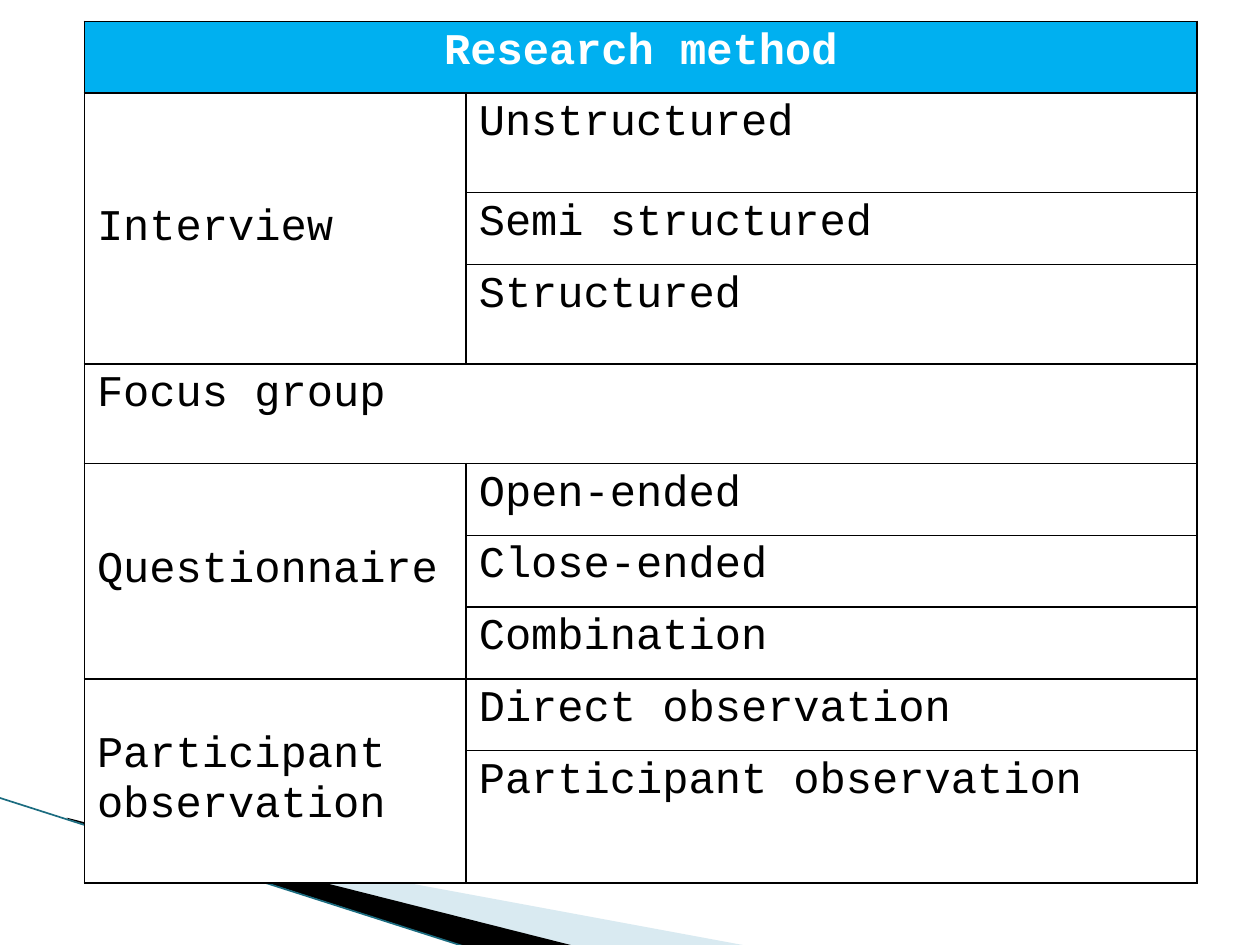
"""Build a slide with a table of research methods."""
from dataclasses import dataclass

from lxml.etree import SubElement
from pptx import Presentation
from pptx.dml.color import RGBColor
from pptx.enum.shapes import MSO_CONNECTOR as Connector
from pptx.enum.text import MSO_ANCHOR as Anchor, PP_ALIGN as Align
from pptx.oxml.ns import qn
from pptx.shapes.autoshape import Shape
from pptx.slide import Slide
from pptx.table import _Cell as Cell
from pptx.util import Inches, Pt


@dataclass(frozen=True)
class Theme:
    """Colours, font and sizes of the slide."""
    font: str = "Courier New"
    size: float = 25
    ink: str = "000000"
    paper: str = "FFFFFF"
    header: str = "00B0F0"
    pale: str = "A0CBDC"
    edge: str = "1B6C80"
    border: float = 1
    edge_width: float = 0.95


@dataclass(frozen=True)
class Wedge:
    """A filled outline in the corner, with its frame and points in inches."""
    frame: tuple[float, float, float, float]
    points: tuple[tuple[float, float], ...]
    color: str
    opacity: int = 100


@dataclass(frozen=True)
class Method:
    """A research method with its kinds and their row heights in inches."""
    name: str
    heights: tuple[float, ...]
    kinds: tuple[str, ...] = ()


THEME = Theme()
HEADER_HEIGHT = 0.57
COLUMNS = (3.03, 5.8)
WEDGES = (
    Wedge((0.78, 5.47, 4.16, 1.58),
          ((0.55, 6.51), (5.95, 7.51), (4.56, 7.51), (0.55, 6.5)), THEME.pale, 40),
    Wedge((-0.06, 6.33, 4.16, 0.92),
          ((0.53, 6.49), (4.57, 7.51), (3.72, 7.52), (0.54, 6.5)), THEME.ink),
)
METHODS = (
    Method("Interview", (0.79, 0.57, 0.79), ("Unstructured", "Semi structured", "Structured")),
    Method("Focus group", (0.79,)),
    Method("Questionnaire", (0.57, 0.57, 0.57), ("Open-ended", "Close-ended", "Combination")),
    Method("Participant observation", (0.57, 1.05), ("Direct observation", "Participant observation")),
)


def rgb(color: str) -> RGBColor:
    """Turn a hex string into a colour."""
    return RGBColor.from_string(color)


def reframe(shape: Shape, frame: tuple[float, float, float, float]) -> None:
    """Change the frame of a freeform while its outline stays in place."""
    left, top, width, height = map(Inches, frame)
    outline = next(shape._element.iter(qn("a:path")))
    for point in outline.iter(qn("a:pt")):
        point.set("x", str(int(point.get("x")) + shape.left - left))
        point.set("y", str(int(point.get("y")) + shape.top - top))
    outline.set("w", str(width))
    outline.set("h", str(height))
    shape.left, shape.top, shape.width, shape.height = left, top, width, height


def draw_wedge(page: Slide, wedge: Wedge) -> None:
    """Draw one corner wedge without an outline."""
    points = [(Inches(x), Inches(y)) for x, y in wedge.points]
    builder = page.shapes.build_freeform(*points[0])
    builder.add_line_segments(points[1:], close=True)
    shape = builder.convert_to_shape()
    reframe(shape, wedge.frame)
    shape.shadow.inherit = False
    shape.line.fill.background()
    shape.fill.solid()
    shape.fill.fore_color.rgb = rgb(wedge.color)
    if wedge.opacity < 100:
        color = shape.fill._xPr.find(qn("a:solidFill"))[0]
        SubElement(color, qn("a:alpha"), val=str(wedge.opacity * 1000))


def draw_edge(page: Slide) -> None:
    """Draw the thin slanted line along the wedges."""
    edge = page.shapes.add_connector(
        Connector.STRAIGHT, Inches(-0.01), Inches(6.33), Inches(3.71), Inches(7.52))
    edge.line.color.rgb = rgb(THEME.edge)
    edge.line.width = Pt(THEME.edge_width)
    SubElement(edge._element.spPr, qn("a:effectLst"))


def style_cell(cell: Cell, fill: str) -> None:
    """Give a cell its four borders and its fill."""
    properties = cell._tc.get_or_add_tcPr()
    for side in ("a:lnL", "a:lnR", "a:lnT", "a:lnB"):
        line = SubElement(properties, qn(side), w=str(Pt(THEME.border)))
        SubElement(SubElement(line, qn("a:solidFill")), qn("a:srgbClr"), val=THEME.ink)
    cell.fill.solid()
    cell.fill.fore_color.rgb = rgb(fill)


def write(cell: Cell, text: str, *, color: str = THEME.ink, bold: bool = False,
          align: Align = Align.LEFT, anchor: Anchor = Anchor.TOP) -> None:
    """Write formatted text into a cell."""
    cell.vertical_anchor = anchor
    para = cell.text_frame.paragraphs[0]
    para.alignment = align
    span = para.add_run()
    span.text = text
    span.font.name = THEME.font
    span.font.size = Pt(THEME.size)
    span.font.bold = bold
    span.font.color.rgb = rgb(color)


def draw_table(page: Slide) -> None:
    """Draw the table with a header and one block of rows per method."""
    heights = [HEADER_HEIGHT, *(height for method in METHODS for height in method.heights)]
    table = page.shapes.add_table(
        len(heights), len(COLUMNS), Inches(0.67), Inches(0.17),
        Inches(sum(COLUMNS)), Inches(sum(heights))).table
    for column, width in zip(table.columns, COLUMNS):
        column.width = Inches(width)
    for index, (row, height) in enumerate(zip(table.rows, heights)):
        row.height = Inches(height)
        for cell in row.cells:
            style_cell(cell, THEME.paper if index else THEME.header)

    table.cell(0, 0).merge(table.cell(0, 1))
    write(table.cell(0, 0), "Research method", color=THEME.paper, bold=True, align=Align.CENTER)
    top = 1
    for method in METHODS:
        bottom = top + len(method.heights) - 1
        name_cell = table.cell(top, 0)
        name_cell.merge(table.cell(bottom, 0 if method.kinds else 1))
        write(name_cell, method.name, anchor=Anchor.MIDDLE if method.kinds else Anchor.TOP)
        for index, kind in enumerate(method.kinds, top):
            write(table.cell(index, 1), kind)
        top = bottom + 1


def main() -> None:
    """Build and save the deck."""
    deck = Presentation()
    deck.slide_width, deck.slide_height = Inches(10), Inches(7.5)
    page = deck.slides.add_slide(deck.slide_layouts[6])
    for wedge in WEDGES:
        draw_wedge(page, wedge)
    draw_edge(page)
    draw_table(page)
    deck.save("out.pptx")


if __name__ == "__main__":
    main()
